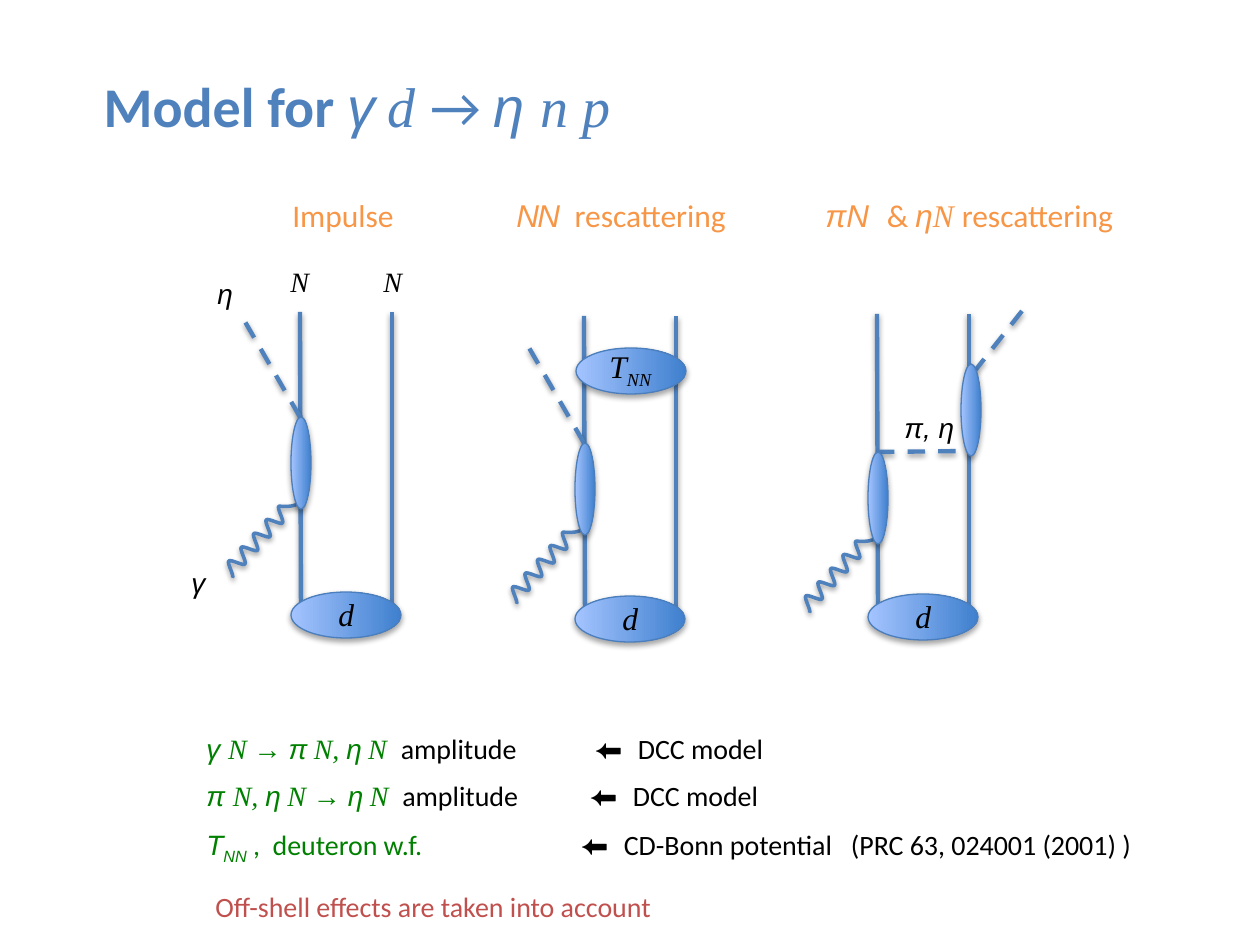
from lxml import etree
from pptx import Presentation
from pptx.dml.color import RGBColor
from pptx.enum.dml import MSO_LINE
from pptx.enum.shapes import MSO_CONNECTOR, MSO_SHAPE
from pptx.enum.text import MSO_ANCHOR, MSO_AUTO_SIZE, PP_ALIGN
from pptx.oxml import parse_xml
from pptx.oxml.ns import nsdecls, qn
from pptx.util import Pt

PX = 914400 / 126
DASH = MSO_LINE.DASH
OVAL = MSO_SHAPE.OVAL
LINE = MSO_CONNECTOR.STRAIGHT
FIT = MSO_AUTO_SIZE.SHAPE_TO_FIT_TEXT
TOP = MSO_ANCHOR.TOP
LEFT = PP_ALIGN.LEFT

BLUE, RIM, LIGHT, DARK = "4F81BD", "4B7EBC", "A4C4FF", "3F80CE"
ORANGE, GREEN, RED, BLACK = "F79646", "008000", "C0504D", "000000"
FACES = {"A": "Arial", "T": "Times New Roman", "C": "Calibri"}

hue = RGBColor.from_string

deck = Presentation()
deck.slide_width, deck.slide_height = int(1260 * PX), int(945 * PX)
slide = deck.slides.add_slide(deck.slide_layouts[5])
shapes = slide.shapes


def text(rows, box, shape=None, size=16, color=BLACK, lead=None):
    """Runs are (words, style, colour); style: face, i, b, s subscript, k tight."""
    x, y, w, h = (int(n * PX) for n in box)
    if shape is None:
        shape = shapes.add_textbox(x, y, w, h)
    shape.left, shape.top, shape.width, shape.height = x, y, w, h
    frame = shape.text_frame
    frame.word_wrap, frame.auto_size = False, FIT
    frame.vertical_anchor = TOP
    for i, row in enumerate(rows):
        para = frame.add_paragraph() if i else frame.paragraphs[0]
        para.alignment, para.line_spacing = LEFT, lead
        for words, style, *tint in row:
            run = para.add_run()
            run.text = words
            font = run.font
            font.name, font.size = FACES[style[0]], Pt(size)
            font.italic, font.bold = "i" in style, "b" in style
            font.color.rgb = hue(tint[0] if tint else color)
            if "s" in style:
                font._element.set("baseline", "-25000")
            if "k" in style:
                font._element.set("spc", str(-5 * size))
    return frame


def paint(shape, width=2.5, color=BLUE, dash=None, drop=20000, alpha=38000):
    """Set the outline and a soft shadow below."""
    shape.line.width, shape.line.color.rgb = Pt(width), hue(color)
    if dash:
        shape.line.dash_style = dash
    shape._element.spPr.append(parse_xml(
        f'<a:effectLst {nsdecls("a")}><a:outerShdw blurRad="40000" dist="{drop}" '
        f'dir="5400000" rotWithShape="0"><a:srgbClr val="{BLACK}">'
        f'<a:alpha val="{alpha}"/></a:srgbClr></a:outerShdw></a:effectLst>'))


# Title
text([[("Model for ", "Cb"), ("γ ", "Aik"), ("d ", "Ti"), ("→ ", "C"),
       ("η ", "Ai"), ("n p", "Ti")]],
     (91, 65, 549, 81), shape=shapes.title, size=32, color=BLUE)

# Photon wave: crests on alternate sides of a slanted axis, two handles per curve
crests = [(227.5 + 6.25 * n + 5 * (-1) ** n, 572.85 - 6.85 * n + 5 * (-1) ** n)
          for n in range(11)]
wave = crests[:1]
for (ax, ay), (bx, by) in zip(crests, crests[1:-1]):
    wave += [(ax + 2, ay - 2), (bx - 2, by + 2), (bx, by)]
wave += [(302, 508), (299, 500), (299, 500), (296, 495)]

# Diagrams: shift right, shift down, further drop of the photon vertex
diagrams = [(0, 0, 0), (284, 4, 26), (577, 2, 35)]
lines, ovals = [], []
for dx, dy, low in diagrams:
    points = [(int((x + dx) * PX), int((y + low) * PX)) for x, y in wave]
    pen = shapes.build_freeform(*points[0], scale=1.0)
    pen.add_line_segments(points[1:], close=False)
    photon = pen.convert_to_shape()
    steps = list(photon._element.iter(qn("a:lnTo")))
    for trio in zip(steps[0:-1:3], steps[1:-1:3], steps[2:-1:3]):
        curve = etree.Element(qn("a:cubicBezTo"))
        trio[0].addprevious(curve)
        for step in trio:
            curve.append(step[0])
            step.getparent().remove(step)
    photon.fill.background()
    paint(photon, width=2)
    lines += [(392 + dx, 606 + dy, 392 + dx, 312 + dy, None),
              (301 + dx, 607 + dy, 300 + dx, 312 + dy, None)]
    ovals += [(291 + dx, 592 + dy, 110, 46), (291 + dx, 417 + low, 20, 92)]

# Outgoing and exchanged mesons, then the rescattering vertices
lines += [(300 + dx, 417 + low, 244 + dx, 320 + low, DASH) for dx, _, low in diagrams[:2]]
lines += [(877, 452, 970, 451, DASH), (1022, 311, 974, 372, DASH)]
ovals += [(576, 348, 110, 46), (961, 364, 20, 92)]

for *ends, dash in lines:
    paint(shapes.add_connector(LINE, *(int(n * PX) for n in ends)), dash=dash)

for box in ovals:
    oval = shapes.add_shape(OVAL, *(int(n * PX) for n in box))
    oval.fill.gradient()
    oval.fill.gradient_angle = 0
    for stop, tint in zip(oval.fill.gradient_stops, (LIGHT, DARK)):
        stop.color.rgb = hue(tint)
    paint(oval, width=0.75, color=RIM, drop=23000, alpha=35000)

# Diagram labels
for dx, dy, _ in diagrams:
    text([[("d", "Ti")]], (326 + dx, 589 + dy, 50, 50), size=18)
text([[("T", "Ti"), ("NN", "Tis")]], (597, 341, 79, 50), size=18)
for words, style, box in [
    ("γ", "Ai", (179, 559, 42, 47)),
    ("η", "Ai", (205, 270, 45, 47)),
    ("N", "Ti", (278, 258, 49, 47)),
    ("N", "Ti", (371, 258, 49, 47)),
    ("π, η", "Ai", (892, 404, 76, 47)),
]:
    text([[(words, style)]], box)

# Diagram headings
for row, x, w in [
    ([("Impulse", "C")], 280, 127),
    ([("ΝΝ  ", "Aik"), ("rescattering", "C")], 504, 242),
    ([("πΝ  ", "Ai"), ("& ", "C"), ("η", "Ai"), ("N ", "Ti"),
      ("rescattering", "C")], 813, 324),
]:
    text([row], (x, 190, w, 50), size=18, color=ORANGE)

# Inputs of the model, with a tab stop before each arrow
arrow = ("⬅  ", "A", BLACK)
model = [("amplitude\t", "C", BLACK), arrow, ("DCC model", "C", BLACK)]
body = text([
    [("γ ", "Ai"), ("N ", "Ti"), ("→ ", "T"), ("π ", "Aik"), ("N, ", "Ti"),
     ("η ", "Aik"), ("N  ", "Ti"), *model],
    [("π ", "Ai"), ("N, ", "Ti"), ("η ", "Aik"), ("N ", "Ti"), ("→ ", "T"),
     ("η ", "Aik"), ("N  ", "Ti"), *model],
    [("Τ", "Ai"), ("ΝΝ", "Ais"), (" ,  deuteron w.f.\t", "C"), arrow,
     ("CD-Bonn potential   (PRC 63, 024001 (2001) )", "C", BLACK)],
], (194, 712, 974, 152), color=GREEN, lead=1.4)
for para, stop in zip(body.paragraphs, (388, 383, 374)):
    tabs = etree.SubElement(para._p.get_or_add_pPr(), qn("a:tabLst"))
    etree.SubElement(tabs, qn("a:tab"), pos=str(int(stop * PX)), algn="l")

# Closing remark
text([[("Off-shell effects are taken into account", "C")]],
     (203, 883, 471, 47), color=RED)

deck.save("out.pptx")
